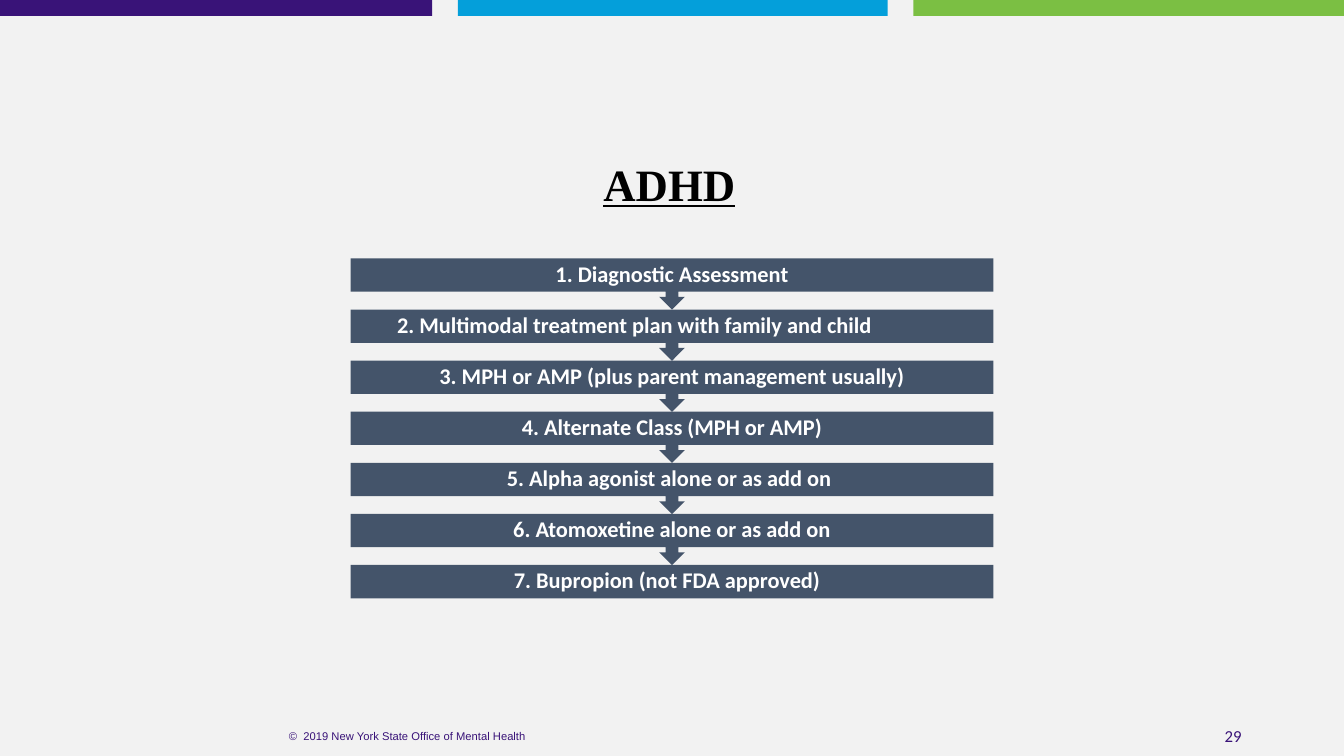
import pptx
import pptx.util
import pptx.dml.color
import pptx.enum.shapes
import pptx.enum.text

Pt = pptx.util.Pt
Shape = pptx.enum.shapes.MSO_SHAPE
Align = pptx.enum.text.PP_ALIGN


def paint(fill, color):
    fill.solid()
    fill.fore_color.rgb = pptx.dml.color.RGBColor.from_string(color)


def write(shape, text, face, size, color, align=Align.CENTER, bold=False):
    frame = shape.text_frame
    frame.word_wrap = True
    frame.vertical_anchor = pptx.enum.text.MSO_ANCHOR.MIDDLE
    para = frame.paragraphs[0]
    para.alignment = align
    run = para.add_run()
    run.text = text
    run.font.name = face
    run.font.size = Pt(size)
    run.font.bold = bold
    paint(run.font.fill, color)
    return run


deck = pptx.Presentation()
deck.slide_width = Pt(960)
deck.slide_height = Pt(540)
slide = deck.slides.add_slide(deck.slide_layouts[6])
paint(slide.background.fill, "F2F2F2")

bands = [(0, 308.6, "391378"), (327, 307, "049FDA"), (652.4, 307.6, "7BBF43")]
for left, width, color in bands:
    band = slide.shapes.add_shape(Shape.RECTANGLE, Pt(left), 0, Pt(width), Pt(11.4))
    band.shadow.inherit = False
    paint(band.fill, color)
    band.line.fill.background()

number = slide.shapes.add_textbox(Pt(678), Pt(511.4), Pt(216), Pt(28.6))
write(number, "29", "Calibri", 12, "391378", Align.RIGHT)

footer = slide.shapes.add_textbox(Pt(130), Pt(511.4), Pt(322), Pt(28.6))
write(footer, "©  2019 New York State Office of Mental Health", "Arial", 8, "391378")

title = slide.shapes.add_textbox(Pt(248.4), Pt(99.4), Pt(459.4), Pt(67.6))
head = write(title, "ADHD", "Times New Roman", 32, "000000", bold=True)
head.font.underline = True
title.text_frame.paragraphs[0].line_spacing = 0.9

steps = [
    ("1. Diagnostic Assessment", 0),
    ("2. Multimodal treatment plan with family and child", 53.5),
    ("3. MPH or AMP (plus parent management usually)", 0),
    ("4. Alternate Class (MPH or AMP)", 0),
    ("5. Alpha agonist alone or as add on", 4),
    ("6. Atomoxetine alone or as add on", 0),
    ("7. Bupropion (not FDA approved)", 7),
]
pitch = 36.5
for index, (text, shift) in enumerate(steps):
    last = index == len(steps) - 1
    kind = Shape.RECTANGLE if last else Shape.DOWN_ARROW_CALLOUT
    height = 23.8 if last else 36.6
    step = slide.shapes.add_shape(
        kind, Pt(250.4), Pt(184.6 + index * pitch), Pt(459.2), Pt(height))
    step.shadow.inherit = False
    paint(step.fill, "44546A")
    step.line.fill.background()
    frame = step.text_frame
    frame.margin_left = Pt(8.6)
    frame.margin_right = Pt(8.6 + shift)
    frame.margin_top = frame.margin_bottom = 0
    write(step, text, "Calibri", 16, "FFFFFF", bold=True)
    frame.paragraphs[0].line_spacing = 0.9

deck.save("out.pptx")
